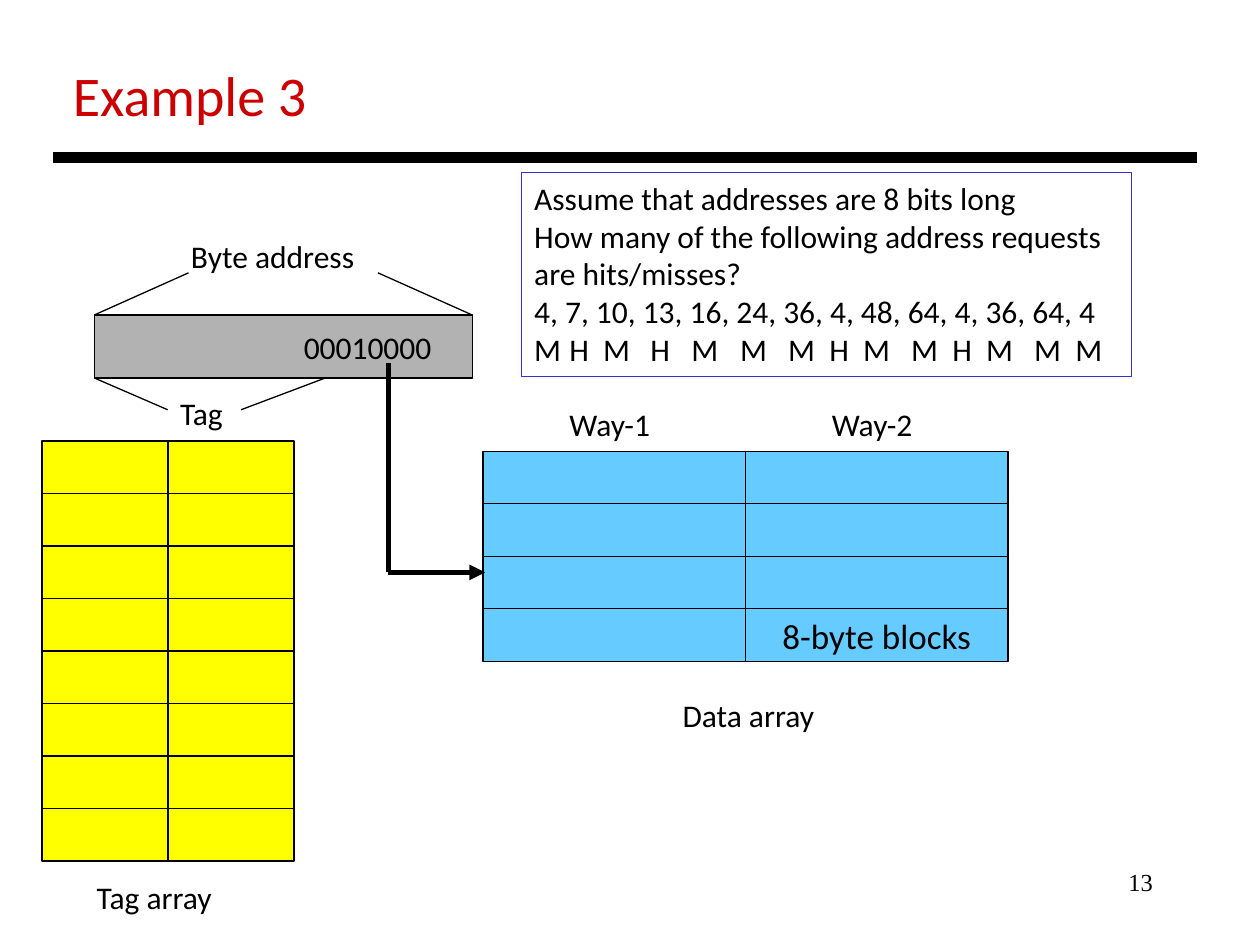
from pptx import Presentation
from pptx.util import Cm, Pt
from pptx.dml.color import RGBColor
from pptx.enum.shapes import MSO_SHAPE, MSO_CONNECTOR
from pptx.enum.text import PP_ALIGN, MSO_ANCHOR
from pptx.oxml.ns import qn
from lxml.etree import SubElement

BLACK = "000000"


def paint(form, color):
    """Give a fill, line fill or font a solid colour."""
    form.rgb = RGBColor.from_string(color)


def write(shape, text, size=18, color=BLACK, font="Calibri", align=PP_ALIGN.LEFT, wrap=False):
    """Put text in a shape and format every run."""
    frame = shape.text_frame
    frame.text = text
    frame.word_wrap = wrap
    for para in frame.paragraphs:
        para.alignment = align
        for run in para.runs:
            run.font.size = Pt(size)
            run.font.name = font
            paint(run.font.color, color)
    return frame


def label(slide, box, text, **style):
    """Add a text box at a box of left, top, width and height."""
    return write(slide.shapes.add_textbox(*map(Cm, box)), text, **style)


def rect(slide, box, fill=None, edge=BLACK):
    """Add a thin-edged rectangle, filled or hollow."""
    shape = slide.shapes.add_shape(MSO_SHAPE.RECTANGLE, *map(Cm, box))
    shape.shadow.inherit = False
    if fill:
        shape.fill.solid()
        paint(shape.fill.fore_color, fill)
    else:
        shape.fill.background()
    paint(shape.line.color, edge)
    shape.line.width = Pt(0.75)
    return shape


def line(slide, start, end, width=0.75, arrow=False):
    """Add a straight black line, with an arrowhead if asked."""
    link = slide.shapes.add_connector(MSO_CONNECTOR.STRAIGHT, *map(Cm, start + end))
    paint(link.line.color, BLACK)
    link.line.width = Pt(width)
    if arrow:
        SubElement(link.line._get_or_add_ln(), qn("a:tailEnd"), type="triangle")
    SubElement(link._element.spPr, qn("a:effectLst"))


def grid(slide, box, rows, cols, fill):
    """Split a box into equal cells and return them row by row."""
    x, y, w, h = box
    wide, high = w / cols, h / rows
    return [
        [rect(slide, (x + c * wide, y + r * high, wide, high), fill) for c in range(cols)]
        for r in range(rows)
    ]


def header(slide, box):
    """Draw the title and the heavy rule at the foot of the box."""
    x, y, w, h = box
    label(slide, (x + 0.15, y, 5.26, 1.63), "Example 3", size=32, color="CC0000")
    line(slide, (x, y + h), (x + w, y + h), 6)


def address(slide, box):
    """Draw the byte address bar with its captions and guide lines."""
    x, y, w, h = box
    bar = rect(slide, box, "B2B2B2")
    frame = write(bar, "00010000", align=PP_ALIGN.RIGHT, wrap=True)
    frame.vertical_anchor = MSO_ANCHOR.MIDDLE
    frame.margin_right = Cm(0.82)
    label(slide, (x + 1.7, y - 1.7, 3.84, 1.02), "Byte address")
    label(slide, (x + 1.48, y + h + 0.2, 1.4, 1.02), "Tag")
    foot = y + h
    line(slide, (x + 1.9, y - 0.85), (x, y))
    line(slide, (x + w - 1.9, y - 0.85), (x + w, y))
    line(slide, (x, foot), (x + 1.48, foot + 0.64))
    line(slide, (x + 4.66, foot), (x + 2.96, foot + 0.64))


def index(slide, box):
    """Draw the index path down and then right to the data array."""
    x, y, w, h = box
    line(slide, (x, y), (x, y + h), 3)
    line(slide, (x, y + h), (x + w, y + h), 3, True)


def tags(slide, box):
    """Draw the tag array and its caption."""
    x, y, w, h = box
    grid(slide, box, 8, 2, "FFFF00")
    label(slide, (x + 0.85, y + h + 0.21, 2.84, 1.02), "Tag array")


def data(slide, box):
    """Draw the data array with its way names and caption."""
    x, y, w, h = box
    cells = grid(slide, box, 4, 2, "66CCFF")
    write(cells[-1][-1], "8-byte blocks", size=20, align=PP_ALIGN.CENTER)
    for col, name in enumerate(("Way-1", "Way-2")):
        label(slide, (x + 1.49 + col * w / 2, y - 1.05, 2.16, 1.02), name)
    label(slide, (x + 3.77, y + h + 0.57, 3.2, 1.02), "Data array")


def question(slide, box):
    """Draw the framed question with the answers on tab stops."""
    lines = (
        "Assume that addresses are 8 bits long",
        "How many of the following address requests",
        "are hits/misses?",
        "4, 7, 10, 13, 16, 24, 36, 4, 48, 64, 4, 36, 64, 4",
        "\t".join("MHMHMMMHMMHMMM"),
    )
    frame = write(rect(slide, box, edge="3333CC"), "\n".join(lines), wrap=True)
    frame.vertical_anchor = MSO_ANCHOR.TOP
    stops = SubElement(frame.paragraphs[-1]._p.get_or_add_pPr(), qn("a:tabLst"))
    for at in (0.71, 1.39, 2.34, 3.17, 4.15, 5.12, 5.95, 6.63, 7.6, 8.43, 9.11, 10.08, 10.91):
        SubElement(stops, qn("a:tab"), pos=str(int(Cm(at))), algn="l")


def main():
    """Build the slide and save it."""
    deck = Presentation()
    deck.slide_width, deck.slide_height = Cm(25.4), Cm(19.05)
    slide = deck.slides.add_slide(deck.slide_layouts[6])
    header(slide, (1.07, 1.09, 23.06, 2.09))
    address(slide, (1.9, 6.35, 7.62, 1.27))
    tags(slide, (0.85, 8.89, 5.08, 8.47))
    data(slide, (9.74, 9.1, 10.58, 4.23))
    index(slide, (7.83, 7.31, 1.95, 4.23))
    question(slide, (10.52, 3.48, 12.29, 4.11))
    label(slide, (18.2, 17.36, 5.29, 1.27), "13", size=14,
          font="Times New Roman", align=PP_ALIGN.RIGHT, wrap=True)
    deck.save("out.pptx")


if __name__ == "__main__":
    main()
